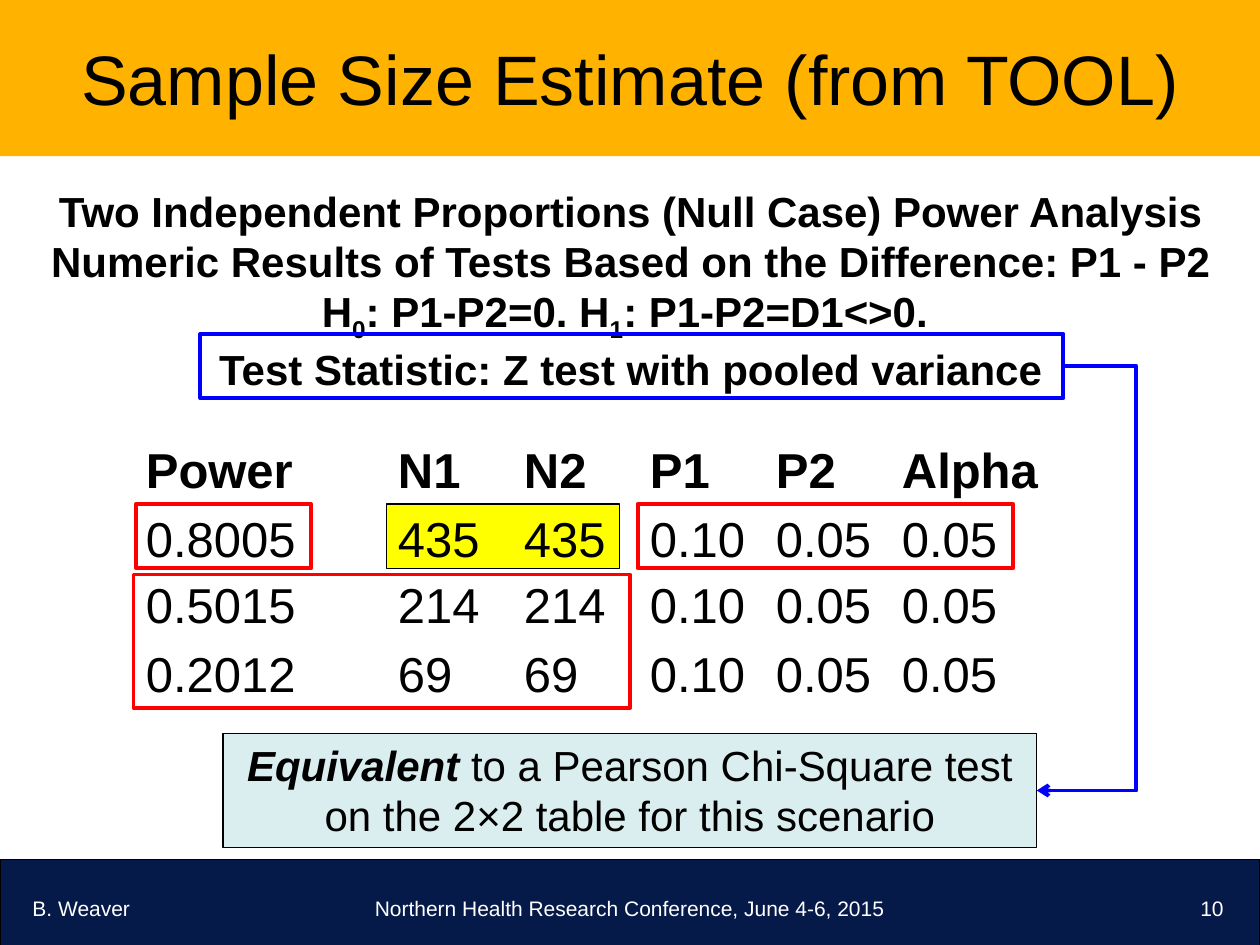
"""Build a slide of sample size estimates for two independent proportions."""
from lxml import etree
from pptx import Presentation
from pptx.dml.color import RGBColor
from pptx.enum.shapes import MSO_CONNECTOR, MSO_SHAPE
from pptx.enum.text import MSO_ANCHOR, PP_ALIGN
from pptx.oxml.ns import qn
from pptx.util import Pt

RECTANGLE = MSO_SHAPE.RECTANGLE
ELBOW = MSO_CONNECTOR.ELBOW
LEFT, CENTER, RIGHT = PP_ALIGN.LEFT, PP_ALIGN.CENTER, PP_ALIGN.RIGHT
TOP, MIDDLE = MSO_ANCHOR.TOP, MSO_ANCHOR.MIDDLE
RIGHT_SIDE = 3

FONT = "Arial"
COLORS = {
    "black": "000000", "white": "FFFFFF", "navy": "061A49", "amber": "FFB300",
    "yellow": "FFFF00", "red": "FF0000", "blue": "0000FF", "pale": "DAEDEF",
}

TITLE = [[("Sample Size Estimate (from TOOL)", "")]]
HEADING = [
    [("Two Independent Proportions (Null Case) Power Analysis", "bold")],
    [("Numeric Results of Tests Based on the Difference: P1 - P2", "bold")],
    [("H", "bold"), ("0", "bold sub"), (": P1-P2=0. H", "bold"),
     ("1", "bold sub"), (": P1-P2=D1<>0. ", "bold")],
    [("Test Statistic: Z test with pooled variance", "bold")],
]
RESULTS = [
    ("Power", "N1", "N2", "P1", "P2", "Alpha"),
    ("0.8005", "435", "435", "0.10", "0.05", "0.05"),
    ("0.5015", "214", "214", "0.10", "0.05", "0.05"),
    ("0.2012", "69", "69", "0.10", "0.05", "0.05"),
]
NOTE = [[("Equivalent", "bold italic"),
         (" to a Pearson Chi-Square test on the 2×2 table for this scenario", "")]]
FOOTERS = [
    ("B. Weaver", 11.5, 88, LEFT),
    ("Northern Health Research Conference, June 4-6, 2015", 172.8, 374.4, CENTER),
    ("10", 558.7, 147.6, RIGHT),
]

ROW_TOP, ROW_HEIGHT = 288, 36.7
RED_FRAMES = [
    (77.8, ROW_TOP, 100, ROW_HEIGHT),
    (364.3, ROW_TOP, 214.6, ROW_HEIGHT),
    (76.3, 328.3, 283.7, 76.3),
]
RESULT_TOPS = (247.7, 324.7)
FIRST_TAB, TAB_STEP = 144, 72
TAB_STOPS = [FIRST_TAB + TAB_STEP * index for index in range(len(RESULTS[0]) - 1)]
ELBOW_X = 649.4


def color(name):
    return RGBColor.from_string(COLORS[name])


def add_box(slide, place, fill=None, line=None, weight=0.75):
    shape = slide.shapes.add_shape(RECTANGLE, *map(Pt, place))
    shape.shadow.inherit = False
    if fill:
        shape.fill.solid()
        shape.fill.fore_color.rgb = color(fill)
    else:
        shape.fill.background()
    if line:
        shape.line.color.rgb = color(line)
        shape.line.width = Pt(weight)
    else:
        shape.line.fill.background()
    return shape


def set_tabs(paragraph, stops):
    properties = paragraph._element.get_or_add_pPr()
    tabs = etree.SubElement(properties, qn("a:tabLst"))
    for stop in stops:
        etree.SubElement(tabs, qn("a:tab"), pos=str(Pt(stop)), algn="l")


def write(shape, paragraphs, size, align=LEFT, ink="black", after=0, anchor=TOP,
          tabs=()):
    frame = shape.text_frame
    frame.word_wrap = True
    frame.vertical_anchor = anchor
    for index, runs in enumerate(paragraphs):
        paragraph = frame.add_paragraph() if index else frame.paragraphs[0]
        paragraph.alignment = align
        paragraph.space_after = Pt(after)
        if tabs:
            set_tabs(paragraph, tabs)
        for text, style in runs:
            run = paragraph.add_run()
            run.text = text
            run.font.name = FONT
            run.font.size = Pt(size)
            run.font.color.rgb = color(ink)
            run.font.bold = "bold" in style
            run.font.italic = "italic" in style
            if "sub" in style:
                run.font._element.set("baseline", "-25000")


def add_text(slide, place, paragraphs, size, **options):
    write(slide.shapes.add_textbox(*map(Pt, place)), paragraphs, size, **options)


def add_elbow_arrow(slide, source, target):
    start, end = source.left + source.width, target.left + target.width
    connector = slide.shapes.add_connector(
        ELBOW, start, source.top + source.height // 2,
        end, target.top + target.height // 2)
    connector.begin_connect(source, RIGHT_SIDE)
    connector.end_connect(target, RIGHT_SIDE)
    connector.line.color.rgb = color("blue")
    connector.line.width = Pt(2.25)
    bend = round((Pt(ELBOW_X) - start) / (end - start) * 100000)
    properties = connector._element.spPr
    guides = properties.find(qn("a:prstGeom")).get_or_add_avLst()
    etree.SubElement(guides, qn("a:gd"), name="adj1", fmla=f"val {bend}")
    etree.SubElement(properties.find(qn("a:ln")), qn("a:tailEnd"), type="arrow")
    etree.SubElement(properties, qn("a:effectLst"))


def main():
    presentation = Presentation()
    presentation.slide_width, presentation.slide_height = Pt(720), Pt(540)
    slide = presentation.slides.add_slide(presentation.slide_layouts[6])

    add_box(slide, (0, 491, 720, 51), "navy", "black")
    for text, left, width, align in FOOTERS:
        add_text(slide, (left, 508.3, width, 21.6), [[(text, "")]], 12,
                 align=align, ink="white")

    add_box(slide, (221, ROW_TOP, 133.2, ROW_HEIGHT), "yellow", "black")
    title = add_box(slide, (0, -0.7, 720, 90), "amber")
    write(title, TITLE, 40, align=CENTER, anchor=MIDDLE)
    add_text(slide, (20.2, 102.2, 680.4, 123.8), HEADING, 24, align=CENTER)

    lines = [[("\t".join(row), "" if index else "bold")]
             for index, row in enumerate(RESULTS)]
    for index, top in enumerate(RESULT_TOPS):
        add_text(slide, (76.3, top, 538.6, 81.4),
                 lines[2 * index:2 * index + 2], 28, after=6, tabs=TAB_STOPS)

    for place in RED_FRAMES:
        add_box(slide, place, line="red", weight=2.25)
    statistic = add_box(slide, (114.5, 190.8, 493.2, ROW_HEIGHT),
                        line="blue", weight=2.25)
    note = add_box(slide, (127.4, 419, 465.1, 65.5), "pale", "black")
    write(note, NOTE, 24, align=CENTER)
    add_elbow_arrow(slide, statistic, note)

    presentation.save("out.pptx")


if __name__ == "__main__":
    main()
